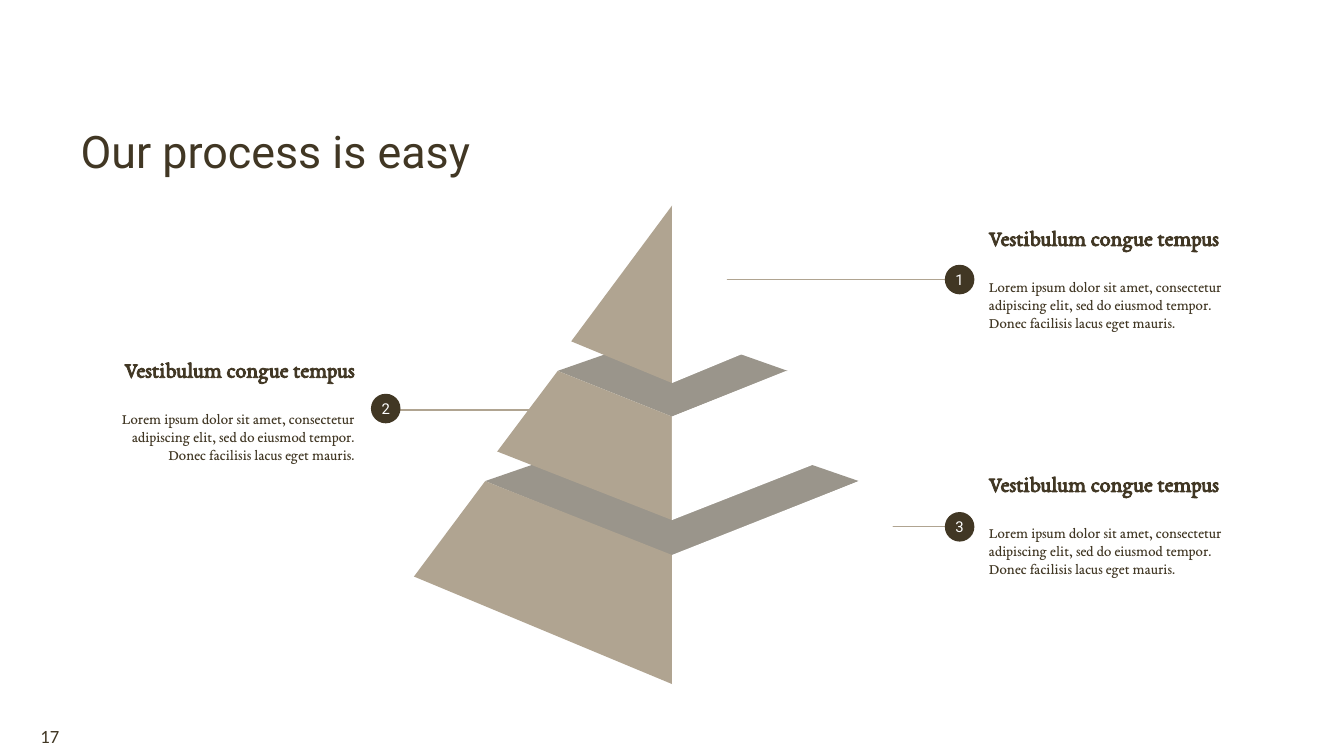
from dataclasses import dataclass

from lxml.etree import SubElement
from pptx import Presentation
from pptx.dml.color import RGBColor
from pptx.enum.shapes import MSO_CONNECTOR as Connector, MSO_SHAPE as Preset
from pptx.enum.text import MSO_ANCHOR as Anchor, PP_ALIGN as Align
from pptx.oxml.ns import qn
from pptx.util import Inches, Pt

COLORS = {"dark": "413724", "sand": "B0A491", "white": "FFFFFF"}
AXIS = 5
BADGE = 0.22
HEADING = "Vestibulum congue tempus"
BODY = (
    "Lorem ipsum dolor sit amet, consectetur adipiscing elit, "
    "sed do eiusmod tempor. Donec facilisis lacus eget mauris."
)
Points = list[tuple[float, float]]


@dataclass
class Step:
    number: int
    text_left: float
    text_top: float
    badge_left: float
    badge_top: float
    line_from: float
    line_to: float
    line_y: float
    align: Align = Align.LEFT


@dataclass
class Tier:
    face: Points
    top: Points


STEPS = [
    Step(3, 7.26, 3.14, 7.03, 3.81, 6.6, 7.24, 3.92),
    Step(2, 0.7, 2.29, 2.76, 2.93, 3.97, 2.83, 3.05, Align.RIGHT),
    Step(1, 7.26, 1.31, 7.03, 1.97, 5.37, 7.24, 2.08),
]
TIERS = [
    Tier([(3.61, 3.58), (3.08, 4.29), (5, 5.09), (5, 4.13)],
         [(3.61, 3.58), (5, 4.14), (6.39, 3.58), (5, 3.1)]),
    Tier([(4.15, 2.76), (5, 3.1), (5, 3.87), (3.7, 3.36)],
         [(4.15, 2.76), (5, 3.1), (5.86, 2.76), (5.01, 2.46)]),
    Tier([(5, 1.53), (4.25, 2.54), (5, 2.85)], []),
]


def color(name: str) -> RGBColor:
    return RGBColor.from_string(COLORS[name])


def style_font(font, family: str, size: float, fill: str = "dark", bold: bool = False) -> None:
    font.name, font.size, font.bold = family, Pt(size), bold
    font.color.rgb = color(fill)


def set_frame(frame, margin: float, anchor: Anchor) -> None:
    frame.word_wrap = True
    frame.vertical_anchor = anchor
    frame.margin_left = frame.margin_right = Inches(margin)
    frame.margin_top = frame.margin_bottom = Inches(margin)


def fill_plain(shape, fill: str) -> None:
    shape.shadow.inherit = False
    shape.fill.solid()
    shape.fill.fore_color.rgb = color(fill)
    shape.line.fill.background()


def draw_title(slide, text: str) -> None:
    title = slide.shapes.title
    title.left, title.top = Inches(0.6), Inches(0.47)
    title.width, title.height = Inches(6.03), Inches(0.85)
    set_frame(title.text_frame, 0, Anchor.BOTTOM)
    title.text_frame.text = text
    paragraph = title.text_frame.paragraphs[0]
    paragraph.alignment = Align.LEFT
    style_font(paragraph.font, "Roboto", 24)


def draw_page_number(slide, number: int) -> None:
    box = slide.shapes.add_textbox(Inches(0.3), Inches(5.34), Inches(9.42), Inches(0.28))
    set_frame(box.text_frame, 0, Anchor.MIDDLE)
    box.text_frame.text = str(number)
    style_font(box.text_frame.paragraphs[0].font, "Calibri", 10)


def draw_step(slide, step: Step) -> None:
    line_y = Inches(step.line_y)
    leader = slide.shapes.add_connector(
        Connector.STRAIGHT, Inches(step.line_from), line_y, Inches(step.line_to), line_y)
    leader.line.color.rgb = color("sand")
    leader.line.width = Pt(0.75)
    SubElement(leader._element.spPr, qn("a:effectLst"))

    box = slide.shapes.add_textbox(
        Inches(step.text_left), Inches(step.text_top), Inches(2.04), Inches(1.51))
    frame = box.text_frame
    set_frame(frame, 0.1, Anchor.MIDDLE)
    heading, body = frame.paragraphs[0], frame.add_paragraph()
    heading.text, body.text = HEADING, BODY
    heading.alignment = body.alignment = step.align
    heading.space_after = Pt(14.6)
    body.space_after = Pt(16)
    style_font(heading.font, "EB Garamond", 12, bold=True)
    style_font(body.font, "EB Garamond", 8)

    badge = slide.shapes.add_shape(
        Preset.OVAL, Inches(step.badge_left), Inches(step.badge_top), Inches(BADGE), Inches(BADGE))
    fill_plain(badge, "dark")
    set_frame(badge.text_frame, 0, Anchor.MIDDLE)
    badge.text_frame.text = str(step.number)
    label = badge.text_frame.paragraphs[0]
    label.alignment = Align.CENTER
    style_font(label.font, "Roboto", 8, "white")


def draw_polygon(slide, points: Points, fill: str):
    corners = [(Inches(x), Inches(y)) for x, y in points]
    builder = slide.shapes.build_freeform(*corners[0])
    builder.add_line_segments(corners[1:], close=True)
    polygon = builder.convert_to_shape()
    fill_plain(polygon, fill)
    return polygon


def draw_tier(slide, tier: Tier) -> None:
    if tier.top:
        top = draw_polygon(slide, tier.top, "dark")
        tint = top._element.spPr.find(qn("a:solidFill"))[0]
        SubElement(tint, qn("a:alpha"), val="53000")
    draw_polygon(slide, tier.face, "sand")
    draw_polygon(slide, [(2 * AXIS - x, y) for x, y in tier.face], "white")


def main() -> None:
    deck = Presentation()
    deck.slide_width = Inches(10)
    deck.slide_height = deck.slide_width * 9 // 16
    slide = deck.slides.add_slide(deck.slide_layouts[5])
    draw_title(slide, "Our process is easy")
    draw_page_number(slide, 17)
    for step in STEPS:
        draw_step(slide, step)
    for tier in TIERS:
        draw_tier(slide, tier)
    deck.save("out.pptx")


if __name__ == "__main__":
    main()
